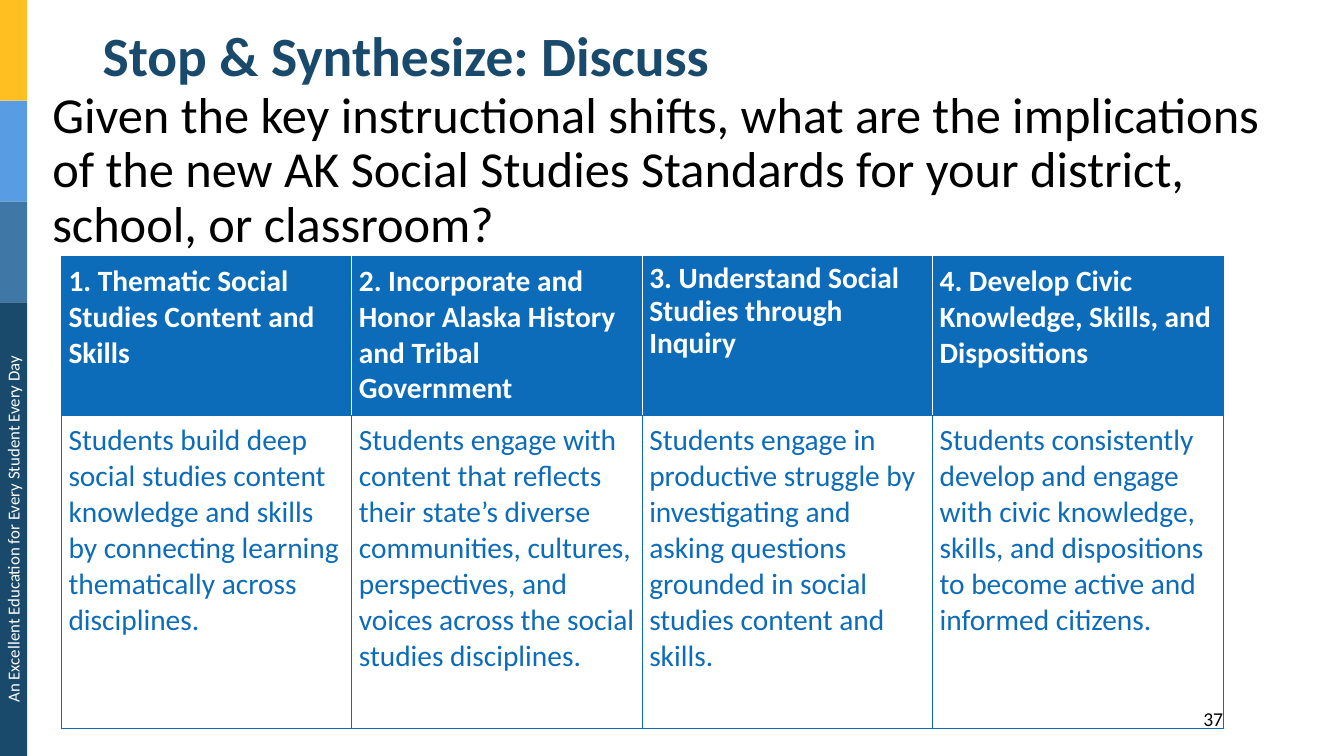
from lxml import etree
from pptx import Presentation
from pptx.dml.color import RGBColor
from pptx.enum.shapes import MSO_SHAPE
from pptx.enum.text import MSO_ANCHOR, PP_ALIGN
from pptx.oxml.ns import qn
from pptx.util import Inches, Pt

RECT = MSO_SHAPE.RECTANGLE
TOP, MIDDLE = MSO_ANCHOR.TOP, MSO_ANCHOR.MIDDLE
LEFT, CENTER, RIGHT = PP_ALIGN.LEFT, PP_ALIGN.CENTER, PP_ALIGN.RIGHT

# Content
TITLE = "Stop & Synthesize: Discuss"
QUESTION = ("Given the key instructional shifts, what are the implications of the new "
            "AK Social Studies Standards for your district, school, or classroom?")
MOTTO = "An Excellent Education for Every Student Every Day"
PAGE = "37"
# Heading, heading line spacing, description
SHIFTS = [
    ("1. Thematic Social Studies Content and Skills", 1.0,
     "Students build deep social studies content knowledge and skills by connecting "
     "learning thematically across disciplines."),
    ("2. Incorporate and Honor Alaska History and Tribal Government", 1.0,
     "Students engage with content that reflects their state’s diverse communities, "
     "cultures, perspectives, and voices across the social studies disciplines."),
    ("3. Understand Social Studies through Inquiry", 0.9,
     "Students engage in productive struggle by investigating and asking questions "
     "grounded in social studies content and skills."),
    ("4. Develop Civic Knowledge, Skills, and Dispositions", 1.0,
     "Students consistently develop and engage with civic knowledge, skills, and "
     "dispositions to become active and informed citizens."),
]

THEME = {
    "font": "Calibri",
    "navy": "194A6B", "steel": "3F78A7", "gold": "FFBF20", "sky": "589CE3",
    "blue": "0D6CB9", "white": "FFFFFF", "black": "000000",
    "title": 39.6, "question": 36, "cell": 21, "page": 14, "motto": 12,
}
# Colour and height of each sidebar band, top to bottom
BANDS = [("gold", 1), ("sky", 1), ("steel", 1), ("navy", 4.5)]
BAND_W = 0.27
TABLE_LEFT, TABLE_TOP = 0.61, 2.54
COL_W, ROW_H = 2.88, (1.58, 3.11)
CELL_INSET, BORDER = 0.07, 0.75


def color(name):
    return RGBColor.from_string(THEME[name])


def write(tf, text, size, ink, bold=False, align=LEFT, spacing=1.0):
    p = tf.paragraphs[0]
    p.alignment, p.line_spacing = align, spacing
    r = p.add_run()
    r.text = text
    r.font.name, r.font.size, r.font.bold = THEME["font"], Pt(THEME[size]), bold
    r.font.color.rgb = color(ink)


def add_text(box, text, size, ink, anchor=TOP, rotation=0, **style):
    sp = s.shapes.add_textbox(*map(Inches, box))
    sp.rotation = rotation
    sp.text_frame.word_wrap = True
    sp.text_frame.vertical_anchor = anchor
    write(sp.text_frame, text, size, ink, **style)


def set_borders(cell, left, right):
    tc_pr = cell._tc.get_or_add_tcPr()
    sides = {"lnL": left, "lnR": right, "lnT": "blue", "lnB": "blue"}
    for i, (side, name) in enumerate(sides.items()):
        ln = etree.Element(qn("a:" + side), w=str(Pt(BORDER)))
        fill = etree.SubElement(ln, qn("a:solidFill"))
        etree.SubElement(fill, qn("a:srgbClr"), val=THEME[name])
        tc_pr.insert(i, ln)


prs = Presentation()
prs.slide_width, prs.slide_height = Inches(13.33), Inches(7.5)
s = prs.slides.add_slide(prs.slide_layouts[6])

# Page number
add_text((11.38, 6.96, 0.85, 0.34), PAGE, "page", "black", align=RIGHT)

# Sidebar bands and motto
top = 0
for name, height in BANDS:
    band = s.shapes.add_shape(RECT, 0, Inches(top), Inches(BAND_W), Inches(height))
    band.shadow.inherit = False
    band.fill.solid()
    band.fill.fore_color.rgb = color(name)
    band.line.fill.background()
    top += height
add_text((-2.12, 5.1, 4.5, 0.3), MOTTO, "motto", "white", rotation=270, align=CENTER)

# Title and question
add_text((0.92, 0.1, 7.14, 0.96), TITLE, "title", "navy", anchor=MIDDLE,
         bold=True, spacing=0.9)
add_text((0.42, 0.84, 12.69, 1.7), QUESTION, "question", "black", spacing=0.9)

# Table of instructional shifts
last = len(SHIFTS) - 1
frame = s.shapes.add_table(2, len(SHIFTS), Inches(TABLE_LEFT), Inches(TABLE_TOP),
                           Inches(COL_W * len(SHIFTS)), Inches(sum(ROW_H)))
table = frame.table
table.first_row = table.horz_banding = False
for row, height in zip(table.rows, ROW_H):
    row.height = Inches(height)
for c, (heading, spacing, description) in enumerate(SHIFTS):
    table.columns[c].width = Inches(COL_W)
    head, body = table.cell(0, c), table.cell(1, c)
    for cell in (head, body):
        cell.margin_left = cell.margin_right = Inches(CELL_INSET)
        cell.margin_top = cell.margin_bottom = Inches(CELL_INSET)
    head.fill.solid()
    head.fill.fore_color.rgb = color("blue")
    body.fill.background()
    write(head.text_frame, heading, "cell", "white", bold=True, spacing=spacing)
    write(body.text_frame, description, "cell", "blue")
    set_borders(head, "blue" if c == 0 else "white", "blue" if c == last else "white")
    set_borders(body, "blue", "blue")

prs.save("out.pptx")
